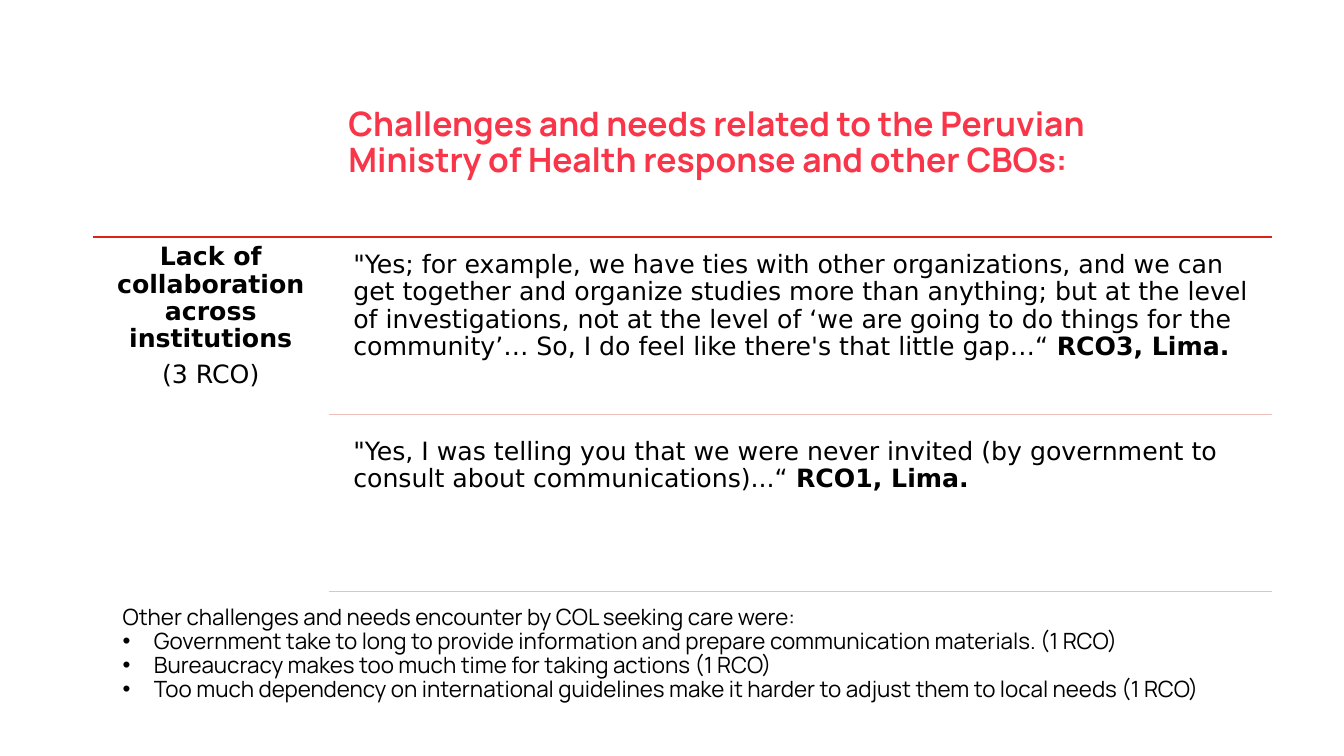
from dataclasses import dataclass

from lxml import etree
from pptx import Presentation
from pptx.dml.color import RGBColor
from pptx.enum.shapes import MSO_CONNECTOR
from pptx.enum.text import MSO_ANCHOR, MSO_AUTO_SIZE, PP_ALIGN
from pptx.oxml.ns import qn
from pptx.util import Cm, Pt

LEFT, CENTER = PP_ALIGN.LEFT, PP_ALIGN.CENTER
TOP, MIDDLE = MSO_ANCHOR.TOP, MSO_ANCHOR.MIDDLE
STRAIGHT = MSO_CONNECTOR.STRAIGHT
NO_AUTOFIT = MSO_AUTO_SIZE.NONE


@dataclass(frozen=True)
class Theme:
    heading_font: str = "Manrope"
    quote_font: str = "DejaVu Sans"
    title_color: RGBColor = RGBColor(0xF9, 0x35, 0x49)
    text_color: RGBColor = RGBColor(0, 0, 0)
    main_rule: RGBColor = RGBColor(0xDB, 0x24, 0x15)
    quote_rule: RGBColor = RGBColor(0xEE, 0xBE, 0xBD)
    title_size: Pt = Pt(24)
    quote_size: Pt = Pt(18)
    note_size: Pt = Pt(16)


THEME = Theme()

TITLE = ("Challenges and needs related to the Peruvian Ministry of Health "
         "response and other CBOs:")
THEME_NAME = "Lack of collaboration across institutions"
THEME_COUNT = "(3 RCO)"
QUOTES = [
    ("\"Yes; for example, we have ties with other organizations, and we can get "
     "together and organize studies more than anything; but at the level of "
     "investigations, not at the level of ‘we are going to do things for the "
     "community’… So, I do feel like there's that little gap…“ ",
     "RCO3, Lima."),
    ("\"Yes, I was telling you that we were never invited (by government to "
     "consult about communications)...“ ",
     "RCO1, Lima."),
]
OTHERS_INTRO = "Other challenges and needs encounter by COL seeking care were:"
OTHERS = [
    "Government take to long to provide information and prepare communication materials. (1 RCO)",
    "Bureaucracy makes too much time for taking actions (1 RCO)",
    "Too much dependency on international guidelines make it harder to adjust "
    "them to local needs (1 RCO)",
]


def place(shape, box):
    shape.left, shape.top, shape.width, shape.height = box


def set_frame(frame, anchor, side, edge):
    frame.word_wrap = True
    frame.auto_size = NO_AUTOFIT
    frame.vertical_anchor = anchor
    frame.margin_left = frame.margin_right = side
    frame.margin_top = frame.margin_bottom = edge


def style(paragraph, font, size, color, bold=None, align=LEFT, after=Pt(0)):
    paragraph.alignment = align
    paragraph.line_spacing = 0.9
    paragraph.space_before = Pt(0)
    paragraph.space_after = after
    paragraph.font.name = font
    paragraph.font.size = size
    paragraph.font.bold = bold
    paragraph.font.color.rgb = color


def set_bullet(paragraph, char=None, indent=0):
    props = paragraph._p.get_or_add_pPr()
    props.set("marL", str(indent))
    props.set("indent", str(-indent))
    if char:
        etree.SubElement(props, qn("a:buChar")).set("char", char)
    else:
        etree.SubElement(props, qn("a:buNone"))


def add_rule(slide, left, right, y, color):
    rule = slide.shapes.add_connector(STRAIGHT, left, y, right, y)
    rule.line.color.rgb = color
    rule.line.width = Pt(1)
    etree.SubElement(rule._element.spPr, qn("a:effectLst"))


def add_text(slide, box, paragraphs, align=LEFT):
    """Each paragraph is a list of (text, bold) runs."""
    frame = slide.shapes.add_textbox(*box).text_frame
    set_frame(frame, TOP, Cm(0.18), Cm(0.18))
    for index, runs in enumerate(paragraphs):
        paragraph = frame.add_paragraph() if index else frame.paragraphs[0]
        style(paragraph, THEME.quote_font, THEME.quote_size, THEME.text_color,
              align=align, after=Pt(6))
        for text, bold in runs:
            run = paragraph.add_run()
            run.text = text
            run.font.bold = bold


def build_title(slide, box):
    title = slide.shapes.title
    place(title, box)
    set_frame(title.text_frame, MIDDLE, Cm(0.25), Cm(0.13))
    title.text_frame.text = TITLE
    style(title.text_frame.paragraphs[0], THEME.heading_font, THEME.title_size,
          THEME.title_color, bold=True)


def build_quotes(slide, box):
    left, top, width, height = box
    right = left + width
    label_width = width // 5
    row_height = height // len(QUOTES)
    quote_left = left + label_width + Cm(0.44)

    # Theme on the left, under the main rule
    add_rule(slide, left, right, top, THEME.main_rule)
    add_text(slide, (left, top, label_width, Cm(3.53)),
             [[(THEME_NAME, True)], [(THEME_COUNT, False)]], CENTER)

    # One row per quote, each closed by a thin rule
    for row, (quote, speaker) in enumerate(QUOTES):
        row_top = top + row * row_height
        add_text(slide, (quote_left, row_top + Cm(0.2 + 0.23 * row),
                         right - quote_left, row_height - Cm(0.2)),
                 [[(quote, False), (speaker, True)]])
        add_rule(slide, left + label_width, right, row_top + row_height,
                 THEME.quote_rule)


def build_others(slide, box):
    body = slide.placeholders[1]
    place(body, box)
    frame = body.text_frame
    set_frame(frame, MIDDLE, Cm(0.25), Cm(0.13))
    for index, text in enumerate([OTHERS_INTRO, *OTHERS]):
        paragraph = frame.add_paragraph() if index else frame.paragraphs[0]
        paragraph.text = text
        if index:
            set_bullet(paragraph, "•", Cm(0.79))
        else:
            set_bullet(paragraph)
        style(paragraph, THEME.heading_font, THEME.note_size, THEME.text_color)


def main():
    deck = Presentation()
    deck.slide_width, deck.slide_height = Cm(33.87), Cm(19.05)
    slide = deck.slides.add_slide(deck.slide_layouts[1])

    build_title(slide, (Cm(8.53), Cm(1.78), Cm(21.87), Cm(3.68)))
    build_quotes(slide, (Cm(2.34), Cm(5.97), Cm(29.72), Cm(8.94)))
    build_others(slide, (Cm(2.84), Cm(13.94), Cm(29.21), Cm(5.1)))

    deck.save("out.pptx")


if __name__ == "__main__":
    main()
